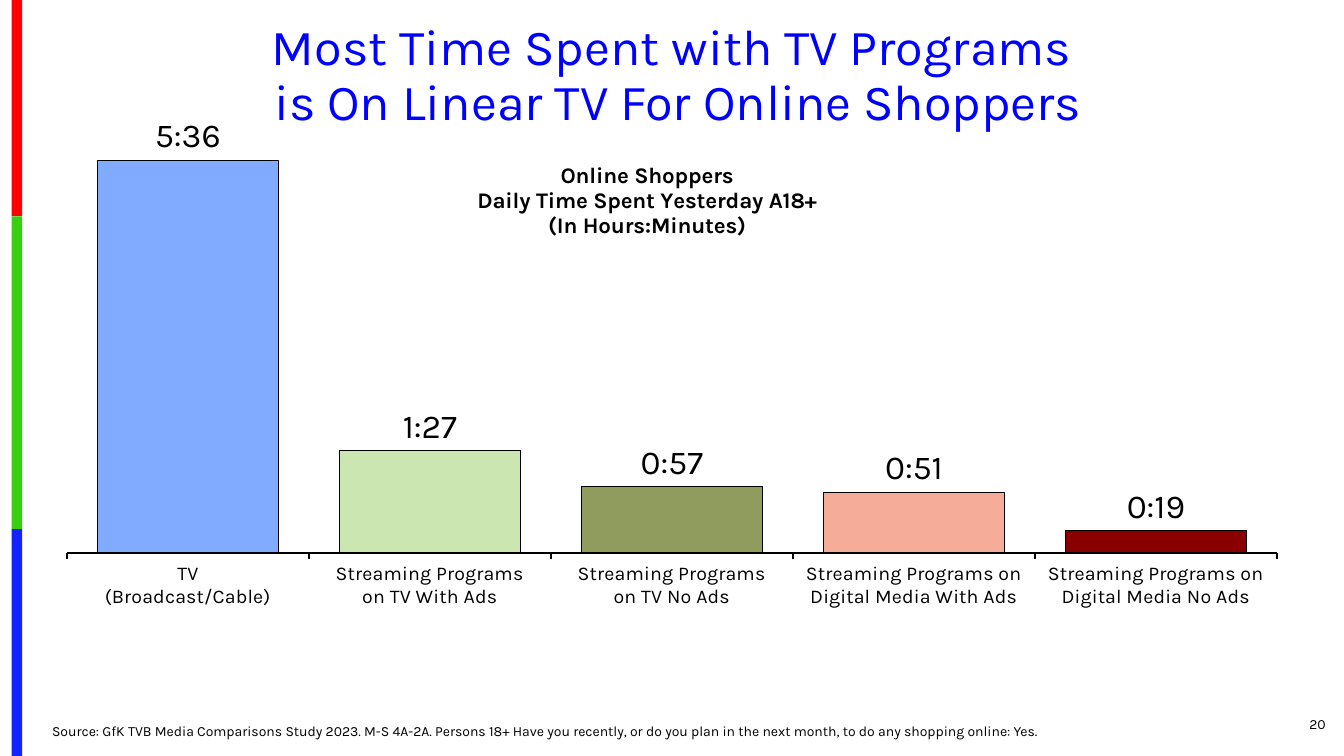
from lxml import etree
from pptx import Presentation
from pptx import util as u
from pptx.chart import data as chart_data
from pptx.dml import color
from pptx.enum import chart as ch, shapes, text
from pptx.oxml import ns

PX = 9525
FONT = "Karla"
BLACK = "000000"
STRIPES = [(206, "FE0000"), (298, "36CF12"), (216, "1322FE")]
PROGRAMS = [
    ("TV\n(Broadcast/Cable)", 5, 37, "80ABFF"),
    ("Streaming Programs\non TV With Ads", 1, 28, "CCE6B2"),
    ("Streaming Programs\non TV No Ads", 0, 57, "909C5E"),
    ("Streaming Programs on Digital Media With Ads", 0, 52, "F5AD99"),
    ("Streaming Programs on Digital Media No Ads", 0, 19, "8A0000"),
]
SOURCE = ("Source: GfK TVB Media Comparisons Study 2023.\u00a0M-S 4A-2A. Persons 18+ "
          "Have you recently, or do you plan in the next month, to do any shopping online: Yes.")


def rgb(value):
    return color.RGBColor.from_string(value)


def box(*lengths):
    return [u.Emu(length * PX) for length in lengths]


def day_share(hours, minutes):
    return round((hours * 60 + minutes) / 1440, 4)


def style(font, size, hue=BLACK, bold=False):
    font.name = FONT
    font.size = u.Pt(size)
    font.bold = bold
    font.color.rgb = rgb(hue)


def outline(line, width):
    line.color.rgb = rgb(BLACK)
    line.width = u.Pt(width)


def write(holder, bounds, words, size, hue, align, anchor, spacing=1.0):
    holder.left, holder.top, holder.width, holder.height = box(*bounds)
    frame = holder.text_frame
    frame.word_wrap = True
    frame.auto_size = text.MSO_AUTO_SIZE.NONE
    frame.vertical_anchor = anchor
    frame.text = words
    paragraph = frame.paragraphs[0]
    paragraph.alignment = align
    paragraph.line_spacing = spacing
    paragraph.space_before = u.Pt(0)
    properties = paragraph._p.get_or_add_pPr()
    properties.set("marL", "0")
    properties.set("indent", "0")
    etree.SubElement(properties, ns.qn("a:buNone"))
    style(paragraph.font, size, hue)


def add_stripes(slide):
    top = 0
    for height, hue in STRIPES:
        stripe = slide.shapes.add_shape(
            shapes.MSO_SHAPE.RECTANGLE, *box(11, top, 10, height))
        stripe.shadow.inherit = False
        stripe.fill.solid()
        stripe.fill.fore_color.rgb = rgb(hue)
        stripe.line.fill.background()
        top += height


def set_layout(parent, index, **settings):
    for old in parent.findall(ns.qn("c:layout")):
        parent.remove(old)
    layout = etree.Element(ns.qn("c:layout"))
    manual = etree.SubElement(layout, ns.qn("c:manualLayout"))
    for name, value in settings.items():
        etree.SubElement(manual, ns.qn(f"c:{name}")).set("val", str(value))
    parent.insert(index, layout)


def add_time_chart(slide):
    data = chart_data.CategoryChartData(number_format="h:mm;@")
    data.categories = [name for name, *_ in PROGRAMS]
    data.add_series("Series 1", [day_share(h, m) for _, h, m, _ in PROGRAMS])
    chart = slide.shapes.add_chart(
        ch.XL_CHART_TYPE.COLUMN_CLUSTERED, *box(52, 112, 1176, 523), data).chart
    chart.has_legend = False
    style(chart.font, 10)

    heading = chart.chart_title.text_frame
    heading.text = "Online Shoppers\nDaily Time Spent Yesterday A18+\n(In Hours:Minutes)"
    for paragraph in heading.paragraphs:
        style(paragraph.font, 16, bold=True)
    root = chart.element
    set_layout(root.find(".//" + ns.qn("c:title")), 1,
               xMode="edge", yMode="edge", x=0.34, y=0.07)
    set_layout(root.find(".//" + ns.qn("c:plotArea")), 0, layoutTarget="inner",
               xMode="edge", yMode="edge", x=0.01, y=0.014, w=0.98, h=0.778)

    programs = chart.category_axis
    programs.major_tick_mark = ch.XL_TICK_MARK.OUTSIDE
    style(programs.tick_labels.font, 14)
    outline(programs.format.line, 1.5)
    times = chart.value_axis
    times.minimum_scale = 0
    times.maximum_scale = day_share(6, 5)
    times.has_major_gridlines = False
    times.visible = False

    plot = chart.plots[0]
    plot.gap_width = 34
    plot.vary_by_categories = False
    plot.has_data_labels = True
    labels = plot.data_labels
    labels.show_value = True
    labels.number_format = "h:mm;@"
    labels.number_format_is_linked = False
    labels.position = ch.XL_LABEL_POSITION.OUTSIDE_END
    style(labels.font, 24)
    for index, (*_, hue) in enumerate(PROGRAMS):
        column = plot.series[0].points[index].format
        column.fill.solid()
        column.fill.fore_color.rgb = rgb(hue)
        outline(column.line, 0.75)


def main():
    deck = Presentation()
    deck.slide_width, deck.slide_height = box(1280, 720)
    slide = deck.slides.add_slide(deck.slide_layouts[1])
    add_stripes(slide)
    write(slide.shapes.title, (44, 16, 1192, 114),
          "Most Time Spent with TV Programs\v is On Linear TV For Online Shoppers",
          36, "0000FF", text.PP_ALIGN.CENTER, text.MSO_ANCHOR.MIDDLE, 0.9)
    write(slide.placeholders[1], (40, 671, 976, 38), SOURCE,
          10, BLACK, text.PP_ALIGN.LEFT, text.MSO_ANCHOR.BOTTOM, 0.9)
    page_bounds = (1168, 670, 104, 38)
    write(slide.shapes.add_textbox(*box(*page_bounds)), page_bounds, "20",
          10, BLACK, text.PP_ALIGN.RIGHT, text.MSO_ANCHOR.MIDDLE)
    add_time_chart(slide)
    deck.save("out.pptx")


if __name__ == "__main__":
    main()
